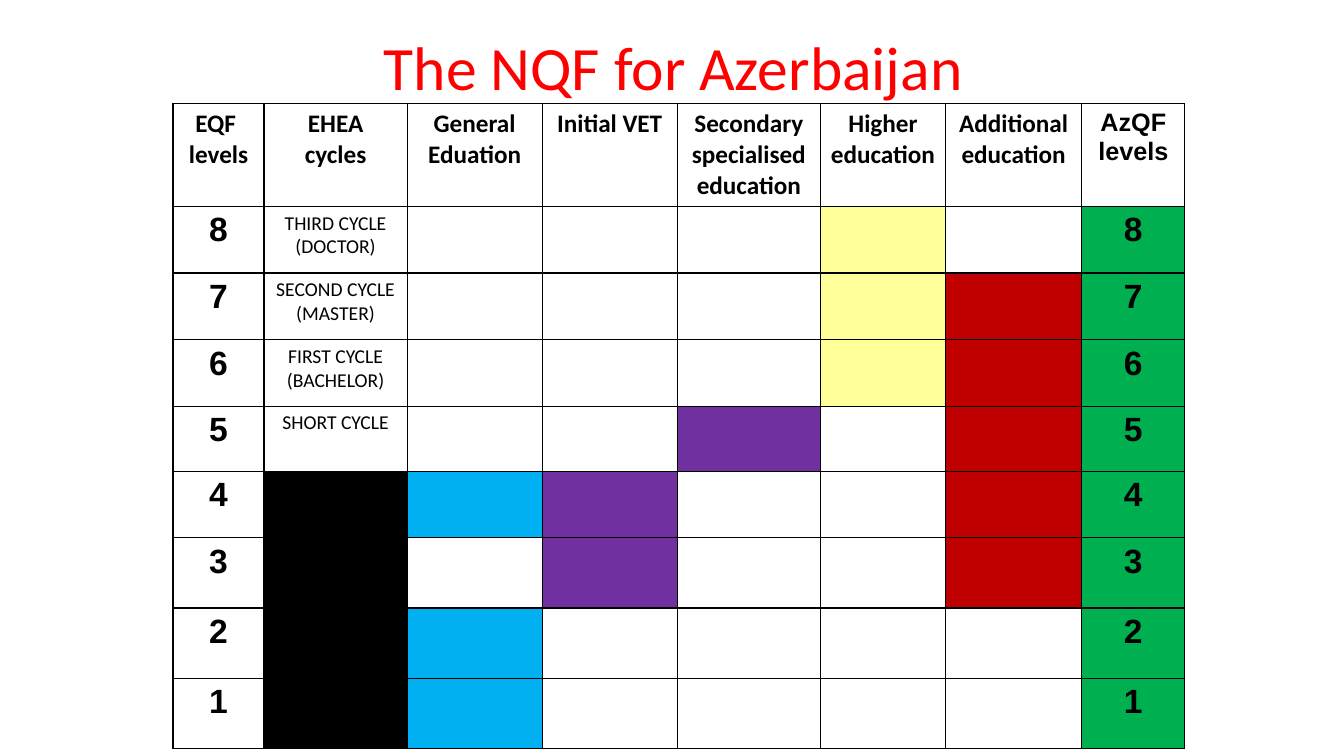
from dataclasses import dataclass

from lxml.etree import SubElement
from pptx import Presentation
from pptx.dml.color import RGBColor
from pptx.enum.shapes import MSO_SHAPE as Shape
from pptx.enum.text import PP_ALIGN as Align
from pptx.oxml.ns import qn
from pptx.util import Pt


@dataclass(frozen=True)
class Theme:
    body_font: str = "Calibri"
    level_font: str = "Arial"
    title_size: int = 44
    level_size: int = 24
    header_size: int = 18
    cycle_size: int = 14
    white: str = "FFFFFF"
    black: str = "000000"
    title: str = "FF0000"
    general: str = "00B0F0"
    vocational: str = "7030A0"
    higher: str = "FFFF99"
    additional: str = "C00000"
    azqf: str = "00B050"


class SlideBuilder:
    def __init__(self, deck, theme):
        self.theme = theme
        self.page = deck.slides.add_slide(deck.slide_layouts[6])

    def add_lines(self, frame, lines, size, font, color, bold=False):
        for number, line in enumerate(lines):
            para = frame.add_paragraph() if number else frame.paragraphs[0]
            para.alignment = Align.CENTER
            span = para.add_run()
            span.text = line
            span.font.size = Pt(size)
            span.font.name = font
            span.font.bold = bold
            span.font.color.rgb = RGBColor.from_string(color)

    def panel(self, left, top, width, height, color):
        box = self.page.shapes.add_shape(
            Shape.RECTANGLE, Pt(left), Pt(top), Pt(width), Pt(height))
        box.shadow.inherit = False
        box.fill.solid()
        box.fill.fore_color.rgb = RGBColor.from_string(color)
        box.line.color.rgb = RGBColor.from_string(color)
        box.line.width = Pt(1)

    def title(self, left, top, width, height, text):
        box = self.page.shapes.add_textbox(Pt(left), Pt(top), Pt(width), Pt(height))
        box.text_frame.word_wrap = True
        self.add_lines(box.text_frame, [text], self.theme.title_size,
                       self.theme.body_font, self.theme.title)

    def table(self, left, top, widths, heights):
        frame = self.page.shapes.add_table(
            len(heights), len(widths), Pt(left), Pt(top),
            Pt(sum(widths)), Pt(sum(heights)))
        grid = frame.table
        grid.first_row = grid.horz_banding = False
        for column, width in zip(grid.columns, widths):
            column.width = Pt(width)
        for row, height in zip(grid.rows, heights):
            row.height = Pt(height)
        for cell in grid.iter_cells():
            self.border(cell)
            self.fill(cell, self.theme.white)
        return grid

    def border(self, cell):
        properties = cell._tc.get_or_add_tcPr()
        for side in ("a:lnL", "a:lnR", "a:lnT", "a:lnB"):
            line = SubElement(properties, qn(side), w=str(Pt(1)))
            paint = SubElement(line, qn("a:solidFill"))
            SubElement(paint, qn("a:srgbClr"), val=self.theme.black)

    def fill(self, cell, color):
        cell.fill.solid()
        cell.fill.fore_color.rgb = RGBColor.from_string(color)

    def cell_text(self, cell, lines, size, font, bold=True):
        self.add_lines(cell.text_frame, lines, size, font, self.theme.black, bold)


HEADERS = [
    ["EQF ", "levels"], ["EHEA", "cycles"], ["General", "Eduation"],
    ["Initial VET"], ["Secondary specialised", "education"],
    ["Higher education"], ["Additional education"], ["AzQF levels"],
]
CYCLES = {
    8: ["THIRD CYCLE (DOCTOR)"],
    7: ["SECOND CYCLE", "(MАSTER)"],
    6: ["FIRST CYCLE", "(BACHELOR)"],
    5: ["SHORT CYCLE"],
}
TOP_LEVEL = 8
COLUMN_WIDTHS = [65, 102.25, 96.5, 96.5, 102.25, 89.25, 97.5, 73.5]
ROW_HEIGHTS = [73.2] + [47.6] * 3 + [46.4, 47.6] + [50.2] * 3


def main():
    theme = Theme()
    deck = Presentation()
    deck.slide_width, deck.slide_height = Pt(960), Pt(540)
    slide = SlideBuilder(deck, theme)

    # Background panel and level grid
    slide.panel(120, 57, 720, 483, theme.white)
    grid = slide.table(123.6, 74.2, COLUMN_WIDTHS, ROW_HEIGHTS)
    last = len(HEADERS) - 1

    # Column headings
    for column, lines in enumerate(HEADERS):
        font = theme.level_font if column == last else theme.body_font
        slide.cell_text(grid.cell(0, column), lines, theme.header_size, font)

    # Level numbers on both sides, cycles beside them
    for level in range(TOP_LEVEL, 0, -1):
        row = TOP_LEVEL + 1 - level
        for column in (0, last):
            slide.cell_text(grid.cell(row, column), [str(level)],
                            theme.level_size, theme.level_font)
        if level in CYCLES:
            slide.cell_text(grid.cell(row, 1), CYCLES[level],
                            theme.cycle_size, theme.body_font, bold=False)

    # Levels covered by each column
    coverage = [
        (1, theme.black, [4, 3, 2, 1]),
        (2, theme.general, [4, 2, 1]),
        (3, theme.vocational, [4, 3]),
        (4, theme.vocational, [5]),
        (5, theme.higher, [8, 7, 6]),
        (6, theme.additional, [7, 6, 5, 4, 3]),
        (last, theme.azqf, range(1, TOP_LEVEL + 1)),
    ]
    for column, color, levels in coverage:
        for level in levels:
            slide.fill(grid.cell(TOP_LEVEL + 1 - level, column), color)

    # Title
    slide.title(141, 17.3, 680.4, 60.5, "The NQF for Azerbaijan")

    deck.save("out.pptx")


if __name__ == "__main__":
    main()
